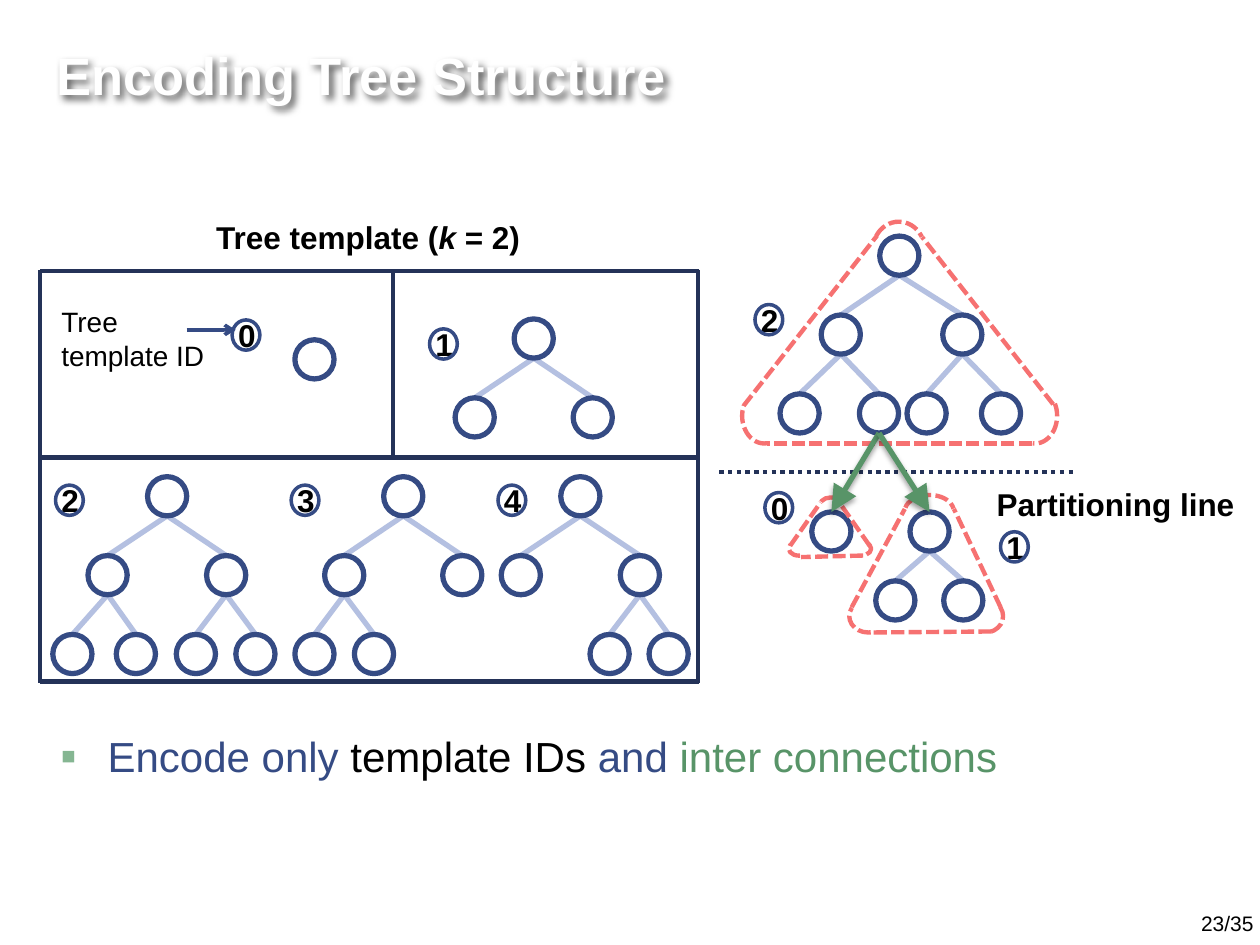
from dataclasses import dataclass

from lxml import etree
from pptx import Presentation
from pptx.dml.color import RGBColor
from pptx.enum.dml import MSO_LINE
from pptx.enum.shapes import MSO_CONNECTOR, MSO_SHAPE
from pptx.enum.text import MSO_ANCHOR, PP_ALIGN
from pptx.oxml.ns import qn
from pptx.util import Cm, Pt

STRAIGHT = MSO_CONNECTOR.STRAIGHT
ELLIPSE, ARC = MSO_SHAPE.OVAL, MSO_SHAPE.ARC
DASHED, DOTTED = MSO_LINE.SQUARE_DOT, MSO_LINE.ROUND_DOT
TOP, MIDDLE = MSO_ANCHOR.TOP, MSO_ANCHOR.MIDDLE
LEFT, RIGHT = PP_ALIGN.LEFT, PP_ALIGN.RIGHT
COLORS = {
    "navy": "243258", "blue": "354B84", "branch": "B4C0E1", "red": "F67171",
    "green": "589468", "bullet": "85B692", "black": "000000", "white": "FFFFFF",
}
FONT = "Arial"
NODE_SIZE = 0.79
ROW_STEP = 1.59


@dataclass(frozen=True)
class Run:
    text: str
    color: str = "black"
    italic: bool = False


@dataclass(frozen=True)
class Node:
    x: float
    children: tuple = ()


@dataclass(frozen=True)
class Tree:
    root: Node
    top: float
    step: float = ROW_STEP


@dataclass(frozen=True)
class Badge:
    label: str
    left: float
    top: float


@dataclass(frozen=True)
class Corner:
    left: float
    top: float
    width: float
    height: float
    start: float
    end: float
    rotation: int = 180


@dataclass(frozen=True)
class Outline:
    sides: tuple
    corners: tuple


TREES = (
    Tree(Node(6.34), 6.85),
    Tree(Node(10.76, (Node(9.57), Node(11.95))), 6.43),
    Tree(Node(3.37, (Node(2.17, (Node(1.46), Node(2.74))),
                     Node(4.56, (Node(3.95), Node(5.15))))), 9.61),
    Tree(Node(8.13, (Node(6.94, (Node(6.34), Node(7.54))), Node(9.32))), 9.61),
    Tree(Node(11.7, (Node(10.5), Node(12.9, (Node(12.29), Node(13.48))))), 9.61),
    Tree(Node(18.13, (Node(16.95, (Node(16.12), Node(17.72))),
                      Node(19.4, (Node(18.68), Node(20.18))))), 4.76),
    Tree(Node(16.76), 10.32),
    Tree(Node(18.74, (Node(18.05), Node(19.42))), 10.32, 1.39),
)
BADGES = (
    Badge("0", 4.55, 6.25), Badge("1", 8.53, 6.43), Badge("2", 0.99, 9.58),
    Badge("3", 5.74, 9.58), Badge("4", 9.91, 9.58), Badge("2", 15.09, 5.94),
    Badge("0", 15.29, 9.73), Badge("1", 20.04, 10.52),
)
FRAME_LINES = (
    (0.81, 5.46, 14.1, 5.46), (0.81, 9.22, 14.07, 9.22), (0.81, 13.74, 14.1, 13.74),
    (0.81, 5.44, 0.81, 13.77), (7.92, 5.44, 7.92, 9.22), (14.07, 5.44, 14.07, 13.77),
)
OUTLINES = (
    Outline(((19.99, 12.73, 17.55, 12.75), (17.17, 12.24, 18.24, 10.26),
             (20.17, 12.24, 19.23, 10.26)),
            (Corner(18.24, 9.98, 0.99, 0.66, 113.17, 212.24, 0),
             Corner(17.12, 12.09, 0.76, 0.66, 156.52, 16.23),
             Corner(19.51, 12.09, 0.71, 0.66, 89.05, 150.25))),
    Outline(((17.4, 11.2, 16.15, 11.23), (15.93, 11, 16.54, 10.13),
             (17.53, 11, 16.92, 10.13)),
            (Corner(16.54, 10.03, 0.41, 0.28, 117.22, 202, 0),
             Corner(15.9, 10.92, 0.41, 0.28, 156.52, 16.23),
             Corner(17.15, 10.92, 0.41, 0.28, 89.05, 150.25))),
    Outline(((20.8, 8.94, 15.47, 8.94), (14.99, 8.18, 17.68, 4.75),
             (21.23, 8.15, 18.59, 4.78)),
            (Corner(17.6, 4.47, 1.04, 1.12, 126.8, 198.76, 0),
             Corner(14.96, 7.82, 0.89, 1.12, 157.94, 16.23),
             Corner(20.42, 7.82, 0.89, 1.12, 89.05, 164.82))),
)
INTER_CONNECTIONS = ((17.72, 8.73, 16.76, 10.32), (17.72, 8.73, 18.74, 10.32))


def rgb(color: str) -> RGBColor:
    return RGBColor.from_string(COLORS[color])


def shadow_effect(blur: float, distance: float, angle: int, opacity: int):
    effects = etree.Element(qn("a:effectLst"))
    shadow = etree.SubElement(effects, qn("a:outerShdw"), blurRad=str(Pt(blur)),
                              dist=str(Pt(distance)), dir=str(angle * 60000),
                              algn="tl", rotWithShape="0")
    color = etree.SubElement(shadow, qn("a:srgbClr"), val=COLORS["black"])
    etree.SubElement(color, qn("a:alpha"), val=str(opacity * 1000))
    return effects


def style_line(line, color: str, width: float, dash=None) -> None:
    line.color.rgb = rgb(color)
    line.width = Pt(width)
    if dash is not None:
        line.dash_style = dash


def add_line(slide, ends: tuple, color: str, width: float, dash=None,
             head: str = "", head_size: str = "med", effects=None) -> None:
    connector = slide.shapes.add_connector(STRAIGHT, *map(Cm, ends))
    style_line(connector.line, color, width, dash)
    if head:
        etree.SubElement(connector.line._get_or_add_ln(), qn("a:tailEnd"),
                         type=head, w=head_size, len=head_size)
    if effects is None:
        effects = etree.Element(qn("a:effectLst"))
    connector._element.spPr.append(effects)


def add_outline_shape(slide, kind, box: tuple, color: str, width: float, dash=None):
    shape = slide.shapes.add_shape(kind, *map(Cm, box))
    shape.shadow.inherit = False
    shape.fill.background()
    style_line(shape.line, color, width, dash)
    return shape


def add_bullet(paragraph, character: str) -> None:
    properties = paragraph._p.get_or_add_pPr()
    properties.set("marL", str(Cm(0.95)))
    properties.set("indent", str(-Cm(0.95)))
    color = etree.SubElement(properties, qn("a:buClr"))
    etree.SubElement(color, qn("a:srgbClr"), val=COLORS["bullet"])
    etree.SubElement(properties, qn("a:buSzPct"), val="110000")
    etree.SubElement(properties, qn("a:buFont"), typeface=FONT)
    etree.SubElement(properties, qn("a:buChar"), char=character)
    paragraph.line_spacing = 1.1
    paragraph.space_after = Pt(6)


def add_text(slide, box: tuple, paragraphs: tuple, size: int = 18, bold: bool = False,
             wrap: bool = True, anchor=TOP, align=LEFT, margin_right: float = 0.25,
             effects=None, bullet: str = "") -> None:
    shape = slide.shapes.add_textbox(*map(Cm, box))
    if effects is not None:
        shape._element.spPr.append(effects)
    frame = shape.text_frame
    frame.word_wrap = wrap
    frame.vertical_anchor = anchor
    frame.margin_right = Cm(margin_right)
    for index, runs in enumerate(paragraphs):
        paragraph = frame.add_paragraph() if index else frame.paragraphs[0]
        paragraph.alignment = align
        if bullet:
            add_bullet(paragraph, bullet)
        for item in runs:
            run = paragraph.add_run()
            run.text = item.text
            run.font.name, run.font.size = FONT, Pt(size)
            run.font.bold, run.font.italic = bold, item.italic
            run.font.color.rgb = rgb(item.color)


def draw_node(slide, node: Node, top: float, step: float) -> None:
    for child in node.children:
        add_line(slide, (node.x, top + NODE_SIZE, child.x, top + step), "branch", 3)
        draw_node(slide, child, top + step, step)
    add_outline_shape(slide, ELLIPSE, (node.x - NODE_SIZE / 2, top, NODE_SIZE, NODE_SIZE), "blue", 3)


def draw_badge(slide, badge: Badge) -> None:
    add_text(slide, (badge.left, badge.top, 0.79, 1.02), ((Run(badge.label),),), bold=True)
    add_outline_shape(slide, ELLIPSE, (badge.left + 0.13, badge.top + 0.2, 0.56, 0.61), "blue", 2)


def draw_outline(slide, outline: Outline) -> None:
    for side in outline.sides:
        add_line(slide, side, "red", 2.5, DASHED)
    for corner in outline.corners:
        box = (corner.left, corner.top, corner.width, corner.height)
        arc = add_outline_shape(slide, ARC, box, "red", 2.5, DASHED)
        arc.adjustments[0], arc.adjustments[1] = corner.start, corner.end
        arc.rotation = corner.rotation


def main() -> None:
    presentation = Presentation()
    presentation.slide_width, presentation.slide_height = Cm(25.4), Cm(19.05)
    slide = presentation.slides.add_slide(presentation.slide_layouts[6])
    for tree in TREES:
        draw_node(slide, tree.root, tree.top, tree.step)
    for ends in FRAME_LINES:
        add_line(slide, ends, "navy", 2.5)
    for outline in OUTLINES:
        draw_outline(slide, outline)
    add_line(slide, (14.5, 9.52, 21.64, 9.52), "navy", 2.5, DOTTED)
    for badge in BADGES:
        draw_badge(slide, badge)
    for ends in INTER_CONNECTIONS:
        add_line(slide, ends, "green", 3, head="triangle", head_size="lg",
                 effects=shadow_effect(3.1, 1.6, 90, 38))
    add_line(slide, (3.76, 6.65, 4.75, 6.65), "blue", 2, head="arrow")
    add_text(slide, (0.99, 6.02, 4.37, 1.63), ((Run("Tree"),), (Run("template ID"),)), size=16)
    add_text(slide, (4.11, 4.27, 6.71, 1.02),
             ((Run("Tree template ("), Run("k", italic=True), Run(" = 2)")),), bold=True, wrap=False)
    add_text(slide, (19.84, 9.65, 5.56, 1.02), ((Run("Partitioning line"),),), bold=True)
    add_text(slide, (0.89, 0.66, 23.47, 1.68), ((Run("Encoding Tree Structure", "white"),),),
             size=30, bold=True, anchor=MIDDLE, effects=shadow_effect(4, 3, 45, 60))
    add_text(slide, (0.97, 14.5, 23.39, 3.86),
             ((Run("Encode only ", "blue"), Run("template IDs"), Run(" and ", "blue"),
               Run("inter connections", "green")),), size=24, bullet="▪")
    add_text(slide, (19.58, 18.16, 5.82, 0.89), ((Run("23/35"),),), size=12,
             anchor=MIDDLE, align=RIGHT, margin_right=0.13)
    presentation.save("out.pptx")


if __name__ == "__main__":
    main()
